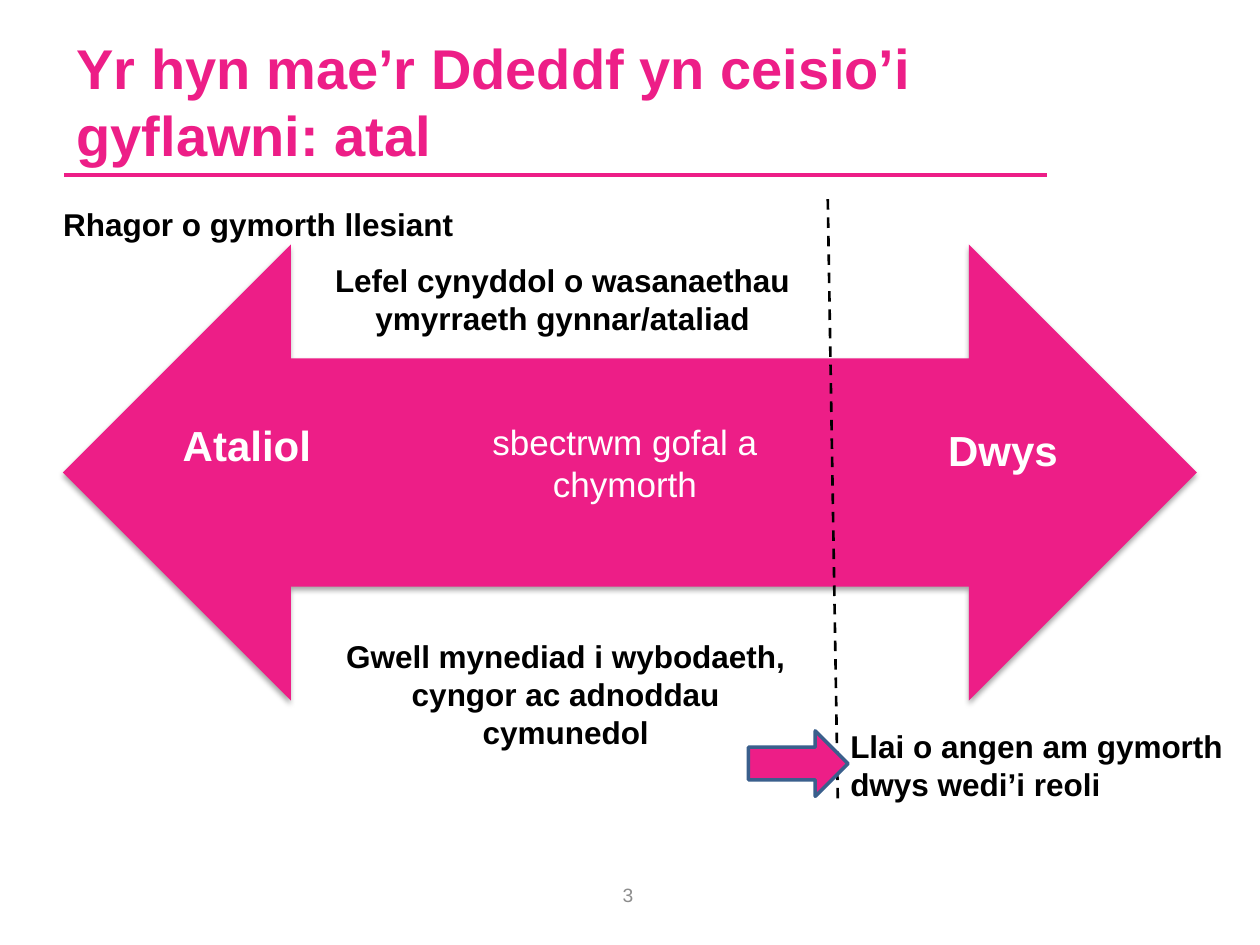
"""Build a slide showing the care and support spectrum, from preventive to intensive."""
from lxml.etree import SubElement
from pptx import Presentation
from pptx.dml.color import RGBColor
from pptx.enum.dml import MSO_LINE
from pptx.enum.shapes import MSO_CONNECTOR, MSO_SHAPE
from pptx.enum.text import MSO_ANCHOR, PP_ALIGN
from pptx.oxml.ns import qn
from pptx.util import Inches, Pt

PINK = RGBColor(0xED, 0x1E, 0x87)
BLUE = RGBColor(0x3A, 0x5F, 0x8C)
GREY = RGBColor(0x8C, 0x8C, 0x8C)
BLACK = RGBColor(0, 0, 0)
WHITE = RGBColor(255, 255, 255)
LEFT, CENTER = PP_ALIGN.LEFT, PP_ALIGN.CENTER
TOP, MIDDLE, BOTTOM = MSO_ANCHOR.TOP, MSO_ANCHOR.MIDDLE, MSO_ANCHOR.BOTTOM

presentation = Presentation()
presentation.slide_width = Inches(10)
presentation.slide_height = Inches(7.5)
slide = presentation.slides.add_slide(presentation.slide_layouts[6])
COLUMN = presentation.slide_width / 100
ROW = presentation.slide_height / 75


def grid(column, row, *size):
    """Turn grid columns and rows into slide lengths."""
    units = (COLUMN, ROW, COLUMN, ROW)
    return [round(count * unit) for count, unit in zip((column, row, *size), units)]


def add_line(start, end, color, width):
    """Draw a straight line without a shadow."""
    line = slide.shapes.add_connector(MSO_CONNECTOR.STRAIGHT, *grid(*start), *grid(*end))
    line.line.color.rgb = color
    line.line.width = Pt(width)
    SubElement(line._element.spPr, qn("a:effectLst"))
    return line


add_line((5.1, 13.9), (83.1, 13.9), PINK, 2)

spectrum = slide.shapes.add_shape(MSO_SHAPE.LEFT_RIGHT_ARROW, *grid(5, 19.4, 90, 36.2))
spectrum.fill.solid()
spectrum.fill.fore_color.rgb = PINK
spectrum.line.fill.background()
effects = SubElement(spectrum._element.spPr, qn("a:effectLst"))
shadow = SubElement(effects, qn("a:outerShdw"), blurRad=str(Pt(3.1)), dist=str(Pt(1.8)),
                    dir="5400000", rotWithShape="0")
shadow_color = SubElement(shadow, qn("a:srgbClr"), val="000000")
SubElement(shadow_color, qn("a:alpha"), val="35000")

boundary = add_line((65.7, 15.8), (66.5, 63.9), BLACK, 1.5)
boundary.line.dash_style = MSO_LINE.DASH

texts = [
    ("Yr hyn mae’r Ddeddf yn ceisio’i gyflawni: atal",
     (5.1, 2.9, 78, 10.9), 32, PINK, True, LEFT, BOTTOM),
    ("Dwys", (72.2, 23.4, 14.8, 24.5), 24, WHITE, True, CENTER, MIDDLE),
    ("Ataliol", (9.1, 24.2, 21, 22.2), 24, WHITE, True, CENTER, MIDDLE),
    ("sbectrwm gofal a chymorth",
     (37.4, 32.9, 24.4, 7.7), 20, WHITE, False, CENTER, TOP),
    ("Rhagor o gymorth llesiant",
     (2.8, 15.8, 35.4, 7.1), 18, BLACK, True, CENTER, TOP),
    ("Lefel cynyddol o wasanaethau ymyrraeth gynnar/ataliad",
     (23.6, 20.2, 42.1, 7.1), 18, BLACK, True, CENTER, TOP),
    ("Gwell mynediad i wybodaeth, cyngor ac adnoddau cymunedol",
     (24.8, 50.1, 40.2, 10.1), 18, BLACK, True, CENTER, TOP),
    ("Llai o angen am gymorth dwys wedi’i reoli",
     (66.5, 57.2, 32.4, 7.1), 18, BLACK, True, LEFT, TOP),
    ("3", (38.2, 69, 23.3, 4), 11, GREY, False, CENTER, MIDDLE),
]
for text, place, size, color, bold, alignment, anchor in texts:
    frame = slide.shapes.add_textbox(*grid(*place)).text_frame
    frame.word_wrap = True
    frame.vertical_anchor = anchor
    paragraph = frame.paragraphs[0]
    paragraph.text = text
    paragraph.alignment = alignment
    paragraph.font.name = "Arial"
    paragraph.font.size = Pt(size)
    paragraph.font.bold = bold
    paragraph.font.color.rgb = color

pointer = slide.shapes.add_shape(MSO_SHAPE.RIGHT_ARROW, *grid(59.4, 58, 7.9, 5.2))
pointer.shadow.inherit = False
pointer.fill.solid()
pointer.fill.fore_color.rgb = PINK
pointer.line.color.rgb = BLUE
pointer.line.width = Pt(2)

presentation.save("out.pptx")
